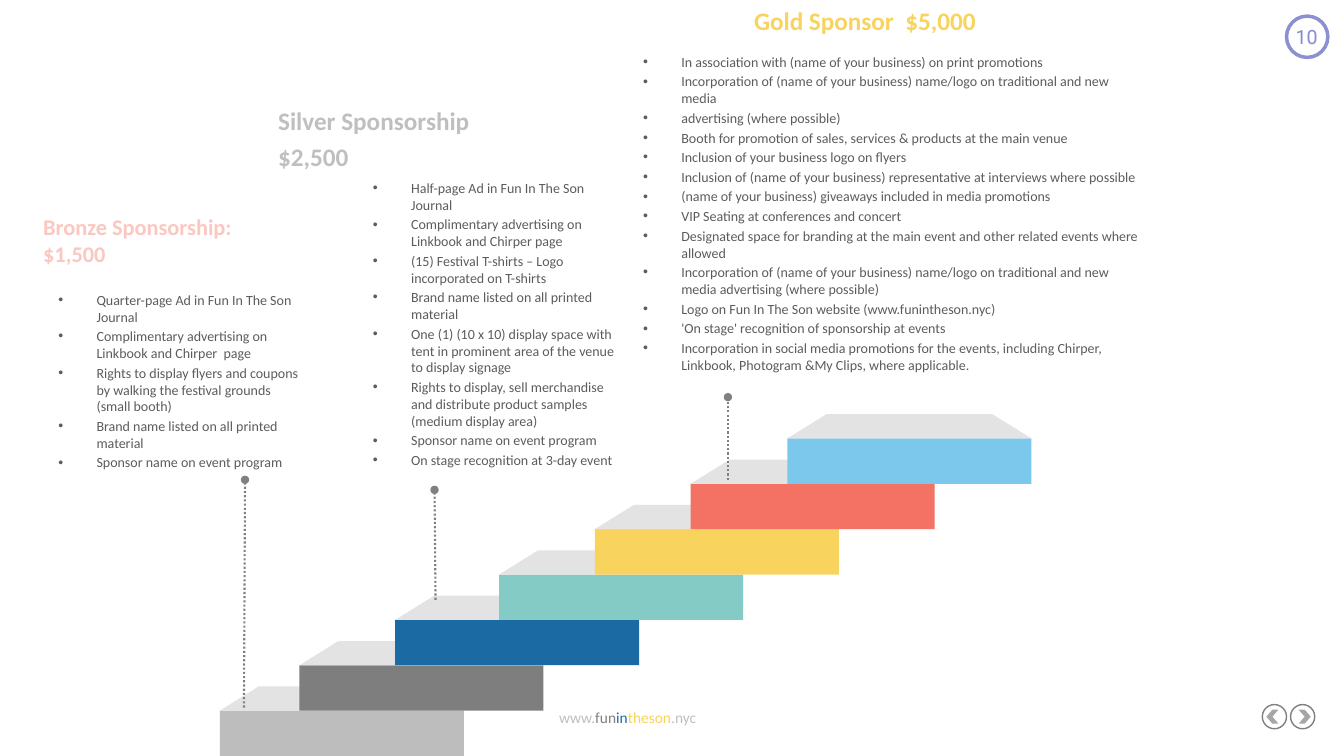
from lxml import etree
from pptx import Presentation
from pptx.dml.color import RGBColor
from pptx.enum.dml import MSO_LINE
from pptx.enum.shapes import MSO_CONNECTOR, MSO_SHAPE
from pptx.enum.text import PP_ALIGN
from pptx.oxml.ns import qn
from pptx.util import Inches, Pt

RECT, TRAPEZOID = MSO_SHAPE.RECTANGLE, MSO_SHAPE.TRAPEZOID
OVAL, CHEVRON = MSO_SHAPE.OVAL, MSO_SHAPE.CHEVRON
LEFT, CENTER = PP_ALIGN.LEFT, PP_ALIGN.CENTER
DOTTED, STRAIGHT = MSO_LINE.ROUND_DOT, MSO_CONNECTOR.STRAIGHT

THEME = {
    "font": "Calibri", "number_font": "Roboto",
    "body": "5C5C5C", "bronze": "FBC7C1", "silver": "BFBFBF", "gold": "F8D35E",
    "gray": "808080", "blue": "1B6AA3", "chevron": "A6A6A6", "tread": "E3E3E3",
    "ring": "8C90D3", "number": "868AD1",
    "steps": ["BDBDBD", "7E7E7E", "1B6AA3", "84CBC5", "F8D35E", "F47264", "7CC8EC"],
    "body_size": 10, "footer_size": 11, "number_size": 14,
    "bronze_size": 16, "title_size": 18,
}

prs = Presentation()
prs.slide_width, prs.slide_height = Inches(13.33), Inches(7.5)
s = prs.slides.add_slide(prs.slide_layouts[6])


def add_text(paragraphs, at, size, color=None, font=THEME["font"], bold=False,
             align=LEFT, bullet=False):
    tf = s.shapes.add_textbox(*map(Inches, at)).text_frame
    tf.word_wrap = True
    for i, runs in enumerate(paragraphs):
        p = tf.paragraphs[0] if i == 0 else tf.add_paragraph()
        if bullet:
            pPr = p._p.get_or_add_pPr()
            pPr.set("marL", str(Inches(0.38)))
            pPr.set("indent", str(Inches(-0.38)))
            etree.SubElement(pPr, qn("a:buFont")).set("typeface", "Arial")
            etree.SubElement(pPr, qn("a:buChar")).set("char", "•")
        p.alignment = align
        if i:
            p.space_before = Pt(size * 0.2)
        for text, run_color in [(runs, color)] if isinstance(runs, str) else runs:
            r = p.add_run()
            r.text = text
            r.font.name, r.font.size, r.font.bold = font, Pt(size), bold
            r.font.color.rgb = RGBColor.from_string(run_color)


def add_shape(kind, at, fill=None, line=None, width=1):
    sp = s.shapes.add_shape(kind, *map(Inches, at))
    sp.shadow.inherit = False
    if fill:
        sp.fill.solid()
        sp.fill.fore_color.rgb = RGBColor.from_string(fill)
    else:
        sp.fill.background()
    if line:
        sp.line.color.rgb = RGBColor.from_string(line)
        sp.line.width = Pt(width)
    else:
        sp.line.fill.background()
    return sp


add_text([[("www.", THEME["silver"]), ("fun", THEME["gray"]), ("in", THEME["blue"]),
           ("theson", THEME["gold"]), (".nyc", THEME["silver"])]],
         (0.47, 6.98, 11.51, 0.39), THEME["footer_size"], align=CENTER)

for ring_x, chevron_x, angle in [(12.8, 12.88, 0), (12.52, 12.56, 180)]:
    add_shape(OVAL, (ring_x, 6.99, 0.24, 0.24), line=THEME["gray"])
    sp = add_shape(CHEVRON, (chevron_x, 7.04, 0.12, 0.14), THEME["chevron"])
    sp.rotation = angle

add_shape(OVAL, (12.76, 0.16, 0.41, 0.41), line=THEME["ring"], width=2.5)
add_text(["10"], (12.71, 0.2, 0.5, 0.34), THEME["number_size"], THEME["number"],
         font=THEME["number_font"], align=CENTER)

STEP_LEFTS = [2.18, 2.97, 3.92, 4.95, 5.9, 6.85, 7.81]
for i, (x, color) in enumerate(zip(STEP_LEFTS, THEME["steps"])):
    y = 7.05 - 0.45 * i
    add_shape(RECT, (x, y, 2.42, 0.45), color)
    sp = add_shape(TRAPEZOID, (x, y - 0.24, 2.42, 0.24), THEME["tread"])
    sp.adjustments[0] = 1.61

for ends in [(4.32, 5.95, 4.31, 4.86), (2.42, 7.02, 2.43, 4.76), (7.22, 4.76, 7.22, 3.94)]:
    pointer = s.shapes.add_connector(STRAIGHT, *map(Inches, ends))
    pointer.line.color.rgb = RGBColor.from_string(THEME["gray"])
    pointer.line.width = Pt(1.5)
    pointer.line.dash_style = DOTTED
    etree.SubElement(pointer.line._get_or_add_ln(), qn("a:tailEnd")).set("type", "oval")
    etree.SubElement(pointer._element.spPr, qn("a:effectLst"))

TITLES = [
    (["Bronze Sponsorship: $1,500"], (0.33, 2.07, 2.6, 0.66), "bronze_size", "bronze"),
    (["Silver Sponsorship", "$2,500"], (2.66, 1, 2.91, 0.2), "title_size", "silver"),
    (["Gold Sponsor  $5,000"], (7.38, 0, 4.79, 0.54), "title_size", "gold"),
]
for lines, at, size, color in TITLES:
    add_text(lines, at, THEME[size], THEME[color], bold=True)

BENEFITS = [
    ((0.48, 2.84, 2.6, 2.59), [
        "Quarter-page Ad in Fun In The Son Journal",
        "Complimentary advertising on Linkbook and Chirper  page",
        "Rights to display flyers and coupons by walking the festival grounds (small booth)",
        "Brand name listed on all printed material",
        "Sponsor name on event program",
    ]),
    ((3.6, 1.73, 2.6, 3.11), [
        "Half-page Ad in Fun In The Son Journal",
        "Complimentary advertising on Linkbook and Chirper page",
        "(15) Festival T-shirts – Logo incorporated on T-shirts",
        "Brand name listed on all printed material",
        "One (1) (10 x 10) display space with tent in prominent area of the venue "
        "to display signage",
        "Rights to display, sell merchandise and distribute product samples "
        "(medium display area)",
        "Sponsor name on event program",
        "On stage recognition at 3-day event",
    ]),
    ((6.28, 0.48, 5.16, 3.47), [
        "In association with (name of your business) on print promotions",
        "Incorporation of (name of your business) name/logo on traditional and new media",
        "advertising (where possible)",
        "Booth for promotion of sales, services & products at the main venue",
        "Inclusion of your business logo on flyers",
        "Inclusion of (name of your business) representative at interviews where possible",
        "(name of your business) giveaways included in media promotions",
        "VIP Seating at conferences and concert",
        "Designated space for branding at the main event and other related events "
        "where allowed",
        "Incorporation of (name of your business) name/logo on traditional and new "
        "media advertising (where possible)",
        "Logo on Fun In The Son website (www.funintheson.nyc)",
        "'On stage' recognition of sponsorship at events",
        "Incorporation in social media promotions for the events, including Chirper, "
        "Linkbook, Photogram &My Clips, where applicable.",
    ]),
]
for at, items in BENEFITS:
    add_text(items, at, THEME["body_size"], THEME["body"], bullet=True)

prs.save("out.pptx")
